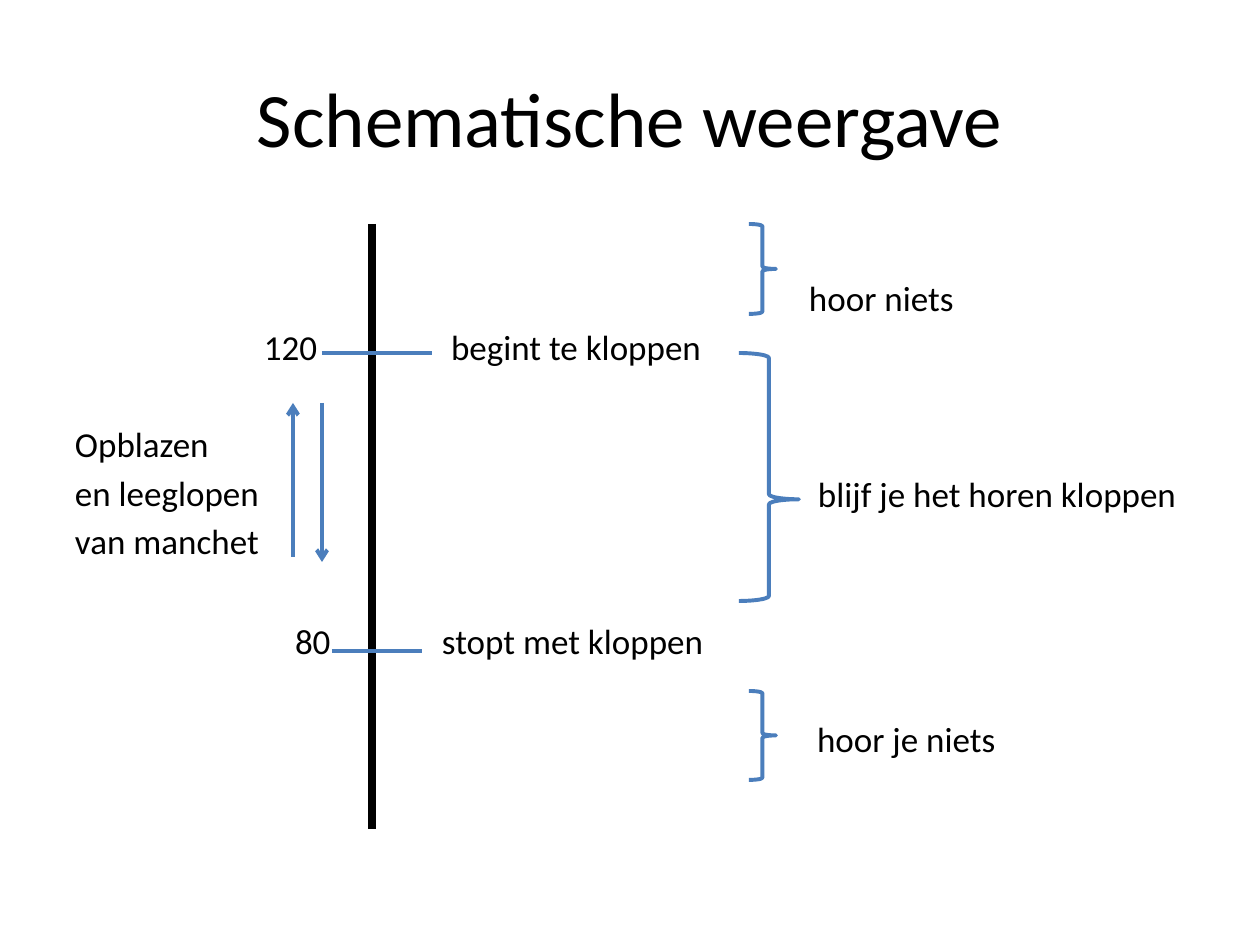
import pptx
import pptx.util
import pptx.dml.color
import pptx.enum.shapes
import pptx.enum.text
from lxml import etree

PX = 914400 / 126
NS = "{http://schemas.openxmlformats.org/drawingml/2006/main}"
COLORS = {"ink": "000000", "blue": "4B7EBC"}
ROW_TOP, ROW_STEP, ROW_TALL = 276, 49, 43


def emu(*sizes):
    return [round(size * PX) for size in sizes]


def write(box, text, size=20, align="LEFT", anchor="TOP", inset=0, gap=0):
    """Fill a box with text, one paragraph for each line."""
    frame = box.text_frame
    frame.text = text
    frame.word_wrap = True
    frame.vertical_anchor = getattr(pptx.enum.text.MSO_ANCHOR, anchor)
    frame.margin_left = frame.margin_right = emu(inset)[0]
    frame.margin_top = frame.margin_bottom = emu(inset // 2)[0]
    for rank, para in enumerate(frame.paragraphs):
        para.alignment = getattr(pptx.enum.text.PP_ALIGN, align)
        para.space_before = pptx.util.Pt(gap if rank else 0)
        para.font.size = pptx.util.Pt(size)
        para.font.name = "Calibri"
        para.font.color.rgb = pptx.dml.color.RGBColor.from_string(COLORS["ink"])


deck = pptx.Presentation()
deck.slide_width, deck.slide_height = emu(1260, 945)
slide = deck.slides.add_slide(deck.slide_layouts[5])
shapes = slide.shapes

title = shapes.title
title.left, title.top, title.width, title.height = emu(63, 38, 1134, 157)
write(title, "Schematische weergave", size=44, align="CENTER", anchor="MIDDLE", inset=12)

# Labels: left, width, row, text
labels = [
    (809, 260, 0, "hoor niets"),
    (264, 60, 1, "120"),
    (451, 270, 1, "begint te kloppen"),
    (75, 200, 3, "Opblazen\nen leeglopen\nvan manchet"),
    (818, 390, 4, "blijf je het horen kloppen"),
    (295, 45, 7, "80"),
    (442, 280, 7, "stopt met kloppen"),
    (817, 260, 9, "hoor je niets"),
]
for left, wide, row, text in labels:
    tall = ROW_TALL + ROW_STEP * text.count("\n")
    box = shapes.add_textbox(*emu(left, ROW_TOP + ROW_STEP * row, wide, tall))
    write(box, text, gap=3.6)

# Scale, pump arrows and level marks: start, end, colour, width, arrow
lines = [
    (372, 224, 372, 829, "ink", 4.5, False),
    (293, 557, 293, 403, "blue", 2.25, True),
    (322, 353, 432, 353, "blue", 2.25, False),
    (332, 651, 422, 651, "blue", 2.25, False),
    (322, 403, 322, 562, "blue", 2.25, True),
]
for *ends, color, width, arrow in lines:
    line = shapes.add_connector(pptx.enum.shapes.MSO_CONNECTOR.STRAIGHT, *emu(*ends))
    line.line.color.rgb = pptx.dml.color.RGBColor.from_string(COLORS[color])
    line.line.width = pptx.util.Pt(width)
    if arrow:
        etree.SubElement(line.line._get_or_add_ln(), NS + "tailEnd", type="arrow")
    etree.SubElement(line._element.spPr, NS + "effectLst")

# Braces: left, top, width, height, point of the tip
braces = [
    (749, 224, 27, 90, 0.5),
    (739, 353, 60, 248, 0.59),
    (749, 691, 27, 89, 0.5),
]
for *place, tip in braces:
    brace = shapes.add_shape(pptx.enum.shapes.MSO_SHAPE.RIGHT_BRACE, *emu(*place))
    brace.shadow.inherit = False
    brace.adjustments[1] = tip
    brace.fill.background()
    brace.line.color.rgb = pptx.dml.color.RGBColor.from_string(COLORS["blue"])
    brace.line.width = pptx.util.Pt(2.25)

deck.save("out.pptx")
